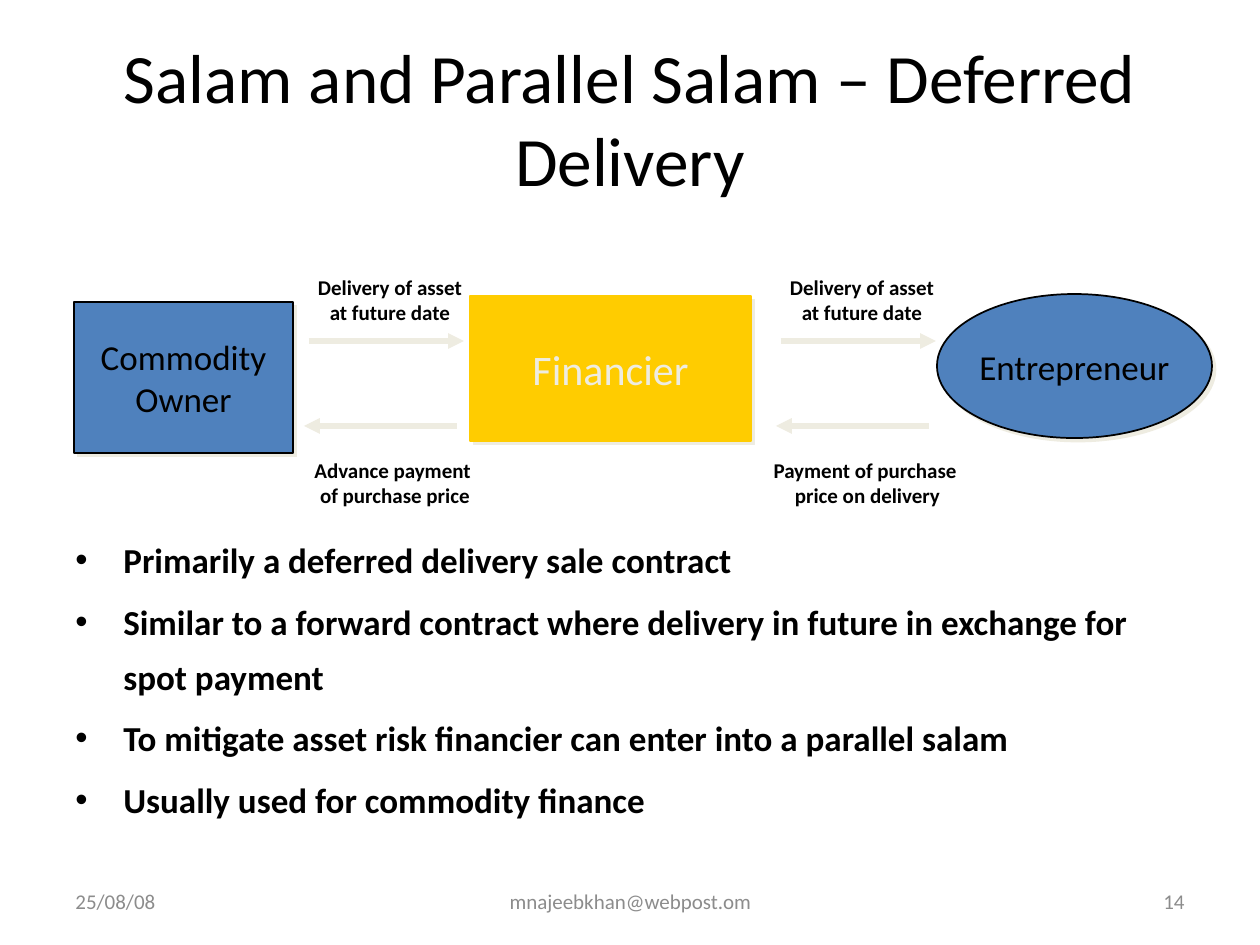
from dataclasses import dataclass

from lxml.etree import SubElement
from pptx import Presentation
from pptx.dml.color import RGBColor as RGB
from pptx.enum.shapes import MSO_CONNECTOR as Link, MSO_SHAPE as Form
from pptx.enum.text import MSO_ANCHOR as Anchor, PP_ALIGN as Align
from pptx.oxml.ns import qn
from pptx.util import Pt

SCALE = 914400 / 126  # EMU per px


def emu(*px):
    return [round(n * SCALE) for n in px]


@dataclass(frozen=True)
class Theme:
    font: str = "Calibri"
    ink: str = "000000"
    blue: str = "4F81BD"
    gold: str = "FFCC00"
    cream: str = "EEECE1"
    gray: str = "8C8C8C"
    title: float = 39.6
    large: float = 24
    body: float = 20
    small: float = 12


class Deck:
    def __init__(self, theme, width, height):
        self.theme = theme
        self.prs = Presentation()
        self.prs.slide_width, self.prs.slide_height = emu(width, height)
        self.slide = self.prs.slides.add_slide(self.prs.slide_layouts[6])

    def label(self, frame, lines, size, color=None, bold=False,
              align=Align.CENTER, anchor=Anchor.TOP, wrap=True):
        frame.word_wrap = wrap
        frame.vertical_anchor = anchor
        for i, line in enumerate(lines):
            par = frame.paragraphs[0] if i == 0 else frame.add_paragraph()
            par.alignment = align
            run = par.add_run()
            run.text = line
            font = run.font
            font.name, font.size, font.bold = self.theme.font, Pt(size), bold
            font.color.rgb = RGB.from_string(color or self.theme.ink)
        return frame

    def text(self, box, lines, size, **style):
        shape = self.slide.shapes.add_textbox(*emu(*box))
        return self.label(shape.text_frame, lines, size, **style)

    def bullets(self, box, lines, size, indent):
        frame = self.text(box, lines, size, bold=True, align=Align.LEFT)
        left = emu(indent)[0]
        for par in frame.paragraphs:
            par.line_spacing = 1.3
            par.space_before = Pt(size * 0.2)
            props = par._p.get_or_add_pPr()
            props.set("marL", str(left))
            props.set("indent", str(-left))
            SubElement(props, qn("a:buFont"), typeface="Arial")
            SubElement(props, qn("a:buChar"), char="•")

    def party(self, form, box, lines, size, fill, edge, color):
        shape = self.slide.shapes.add_shape(form, *emu(*box))
        shape.fill.solid()
        shape.fill.fore_color.rgb = RGB.from_string(fill)
        shape.line.color.rgb = RGB.from_string(edge)
        shape.line.width = Pt(1)
        self.shade(shape)
        self.label(shape.text_frame, lines, size, color=color,
                   anchor=Anchor.MIDDLE, wrap=False)

    def shade(self, shape):
        shape.shadow.inherit = False
        effect = shape._element.spPr.find(qn("a:effectLst"))
        cast = SubElement(effect, qn("a:outerShdw"), dist=str(Pt(2.8)),
                          dir="2700000", algn="ctr", rotWithShape="0")
        SubElement(cast, qn("a:srgbClr"), val=self.theme.cream)

    def arrow(self, start, end, y):
        line = self.slide.shapes.add_connector(
            Link.STRAIGHT, *emu(start, y, end, y))
        line.line.color.rgb = RGB.from_string(self.theme.cream)
        line.line.width = Pt(3)
        SubElement(line.line._get_or_add_ln(), qn("a:tailEnd"),
                   type="triangle")
        SubElement(line._element.spPr, qn("a:effectLst"))

    def save(self):
        self.prs.save("out.pptx")


def main():
    look = Theme()
    deck = Deck(look, 1260, 945)

    # Title
    deck.text((63, 38, 1134, 158),
              ["Salam and Parallel Salam – Deferred Delivery"],
              look.title, anchor=Anchor.MIDDLE)

    # Parties to the contract
    deck.party(Form.RECTANGLE, (74, 302, 219, 151), ["Commodity", "Owner"],
               look.body, look.blue, look.ink, look.ink)
    deck.party(Form.RECTANGLE, (470, 296, 281, 145), ["Financier"],
               look.large, look.gold, look.gold, look.cream)
    deck.party(Form.OVAL, (937, 294, 275, 144), ["Entrepreneur"],
               look.body, look.blue, look.ink, look.ink)

    # Flows between them: delivery to the right, payment to the left
    flows = [
        (0, (290, 451, 210, 63), ["Advance payment ", "of purchase price"]),
        (472, (746, 451, 243, 63),
         ["Payment of purchase ", "price on delivery"]),
    ]
    for shift, box, terms in flows:
        deck.arrow(309 + shift, 464 + shift, 341)
        deck.arrow(457 + shift, 304 + shift, 426)
        deck.text((294 + shift, 268, 192, 63),
                  ["Delivery of asset", "at future date"],
                  look.small, bold=True, wrap=False)
        deck.text(box, terms, look.small, bold=True, wrap=False)

    # Key points
    deck.bullets((63, 520, 1134, 324), [
        "Primarily a deferred delivery sale contract",
        "Similar to a forward contract where delivery in future in "
        "exchange for spot payment",
        "To mitigate asset risk financier can enter into a parallel salam",
        "Usually used for commodity finance",
    ], look.body, 48)

    # Footer
    for left, width, words, align in [
        (63, 294, "25/08/08", Align.LEFT),
        (431, 399, "mnajeebkhan@webpost.om", Align.CENTER),
        (903, 294, "14", Align.RIGHT),
    ]:
        deck.text((left, 876, width, 50), [words], look.small,
                  color=look.gray, align=align, anchor=Anchor.MIDDLE)

    deck.save()


if __name__ == "__main__":
    main()
